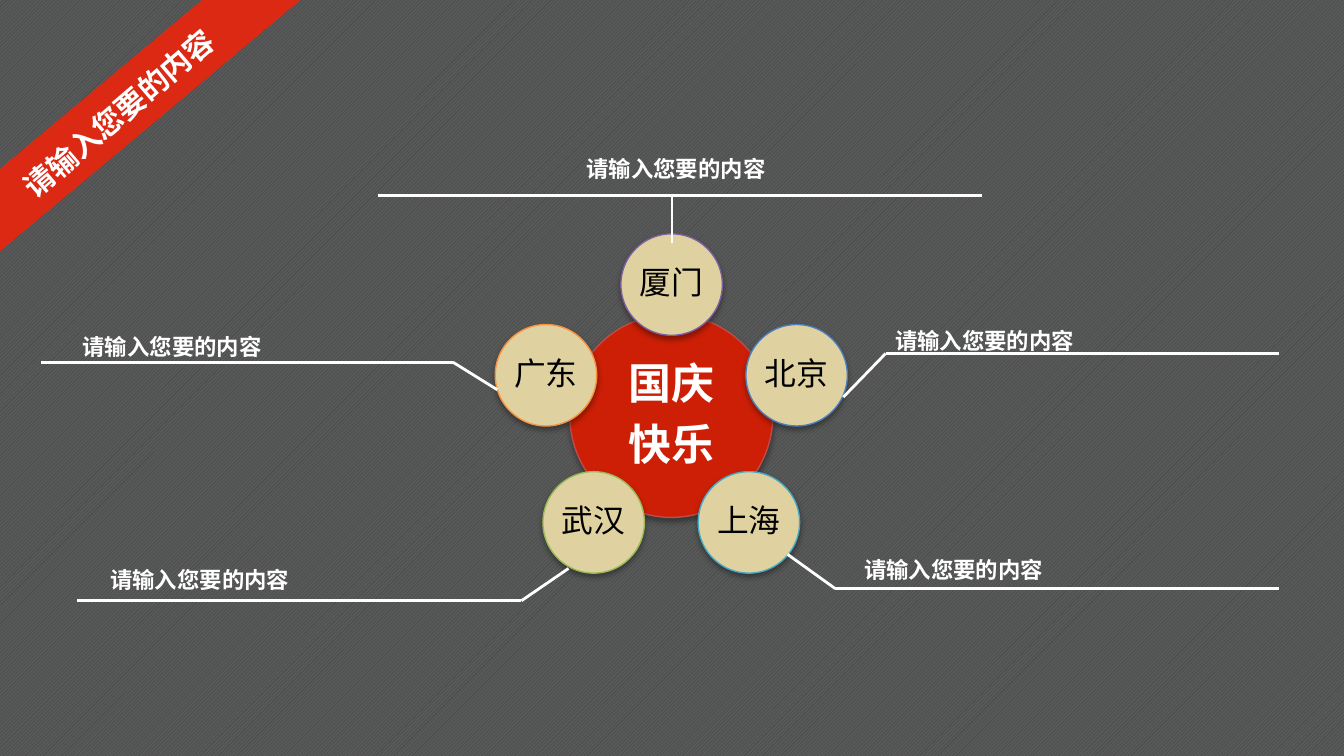
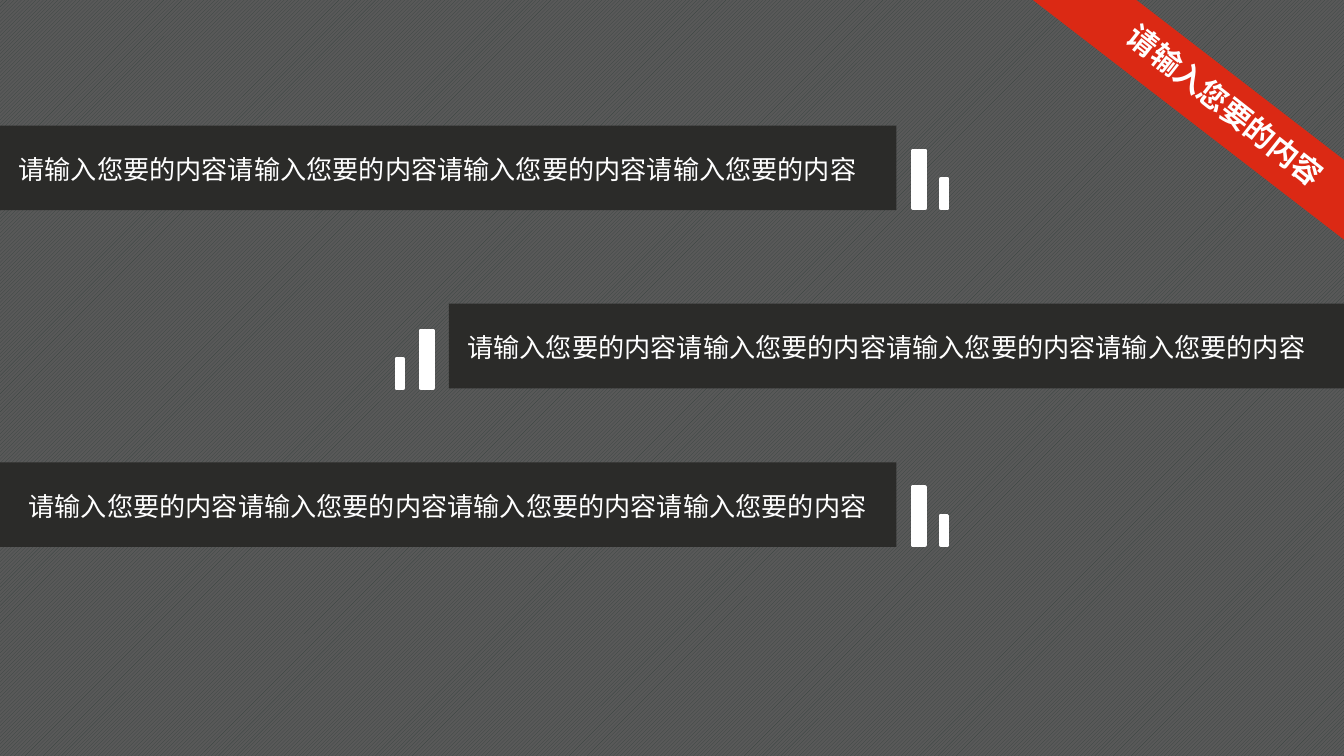
import math
import typing

import lxml.etree
import pptx
import pptx.dml.color
import pptx.enum.dml
import pptx.enum.shapes
import pptx.enum.text
import pptx.oxml.ns
import pptx.presentation
import pptx.shapes.autoshape
import pptx.shapes.base
import pptx.slide
import pptx.text.text
import pptx.util

SCALE = 4572  # EMU in one px, so 200 px to the inch
WIDTH, HEIGHT = 2000, 1125

RGB = pptx.dml.color.RGBColor
WHITE = RGB(0xFF, 0xFF, 0xFF)
BLACK = RGB(0x00, 0x00, 0x00)
RED = RGB(0xDB, 0x29, 0x14)
CRIMSON = RGB(0xCD, 0x1F, 0x06)
ROSE = RGB(0xBF, 0x4C, 0x48)
SAND = RGB(0xDF, 0xD2, 0xA0)
PURPLE = RGB(0x7D, 0x60, 0xA0)
BLUE = RGB(0x4B, 0x7E, 0xBC)
TEAL = RGB(0x46, 0xAA, 0xC5)
GREEN = RGB(0x98, 0xB9, 0x55)
ORANGE = RGB(0xF6, 0x92, 0x40)
COAL = RGB(0x2B, 0x2B, 0x29)
STRIPE = RGB(0x38, 0x43, 0x40)
GREY = RGB(0x59, 0x59, 0x59)

FACE = "Noto Sans CJK SC"
PROMPT = "请输入您要的内容"
PRESET = pptx.enum.shapes.MSO_SHAPE
qn = pptx.oxml.ns.qn


class Box(typing.NamedTuple):
    left: int
    top: int
    width: int
    height: int

    def emu(self) -> list[int]:
        return [side * SCALE for side in self]


class Style(typing.NamedTuple):
    size: int
    color: RGB = WHITE
    bold: bool = False
    lead: float | None = None


class Ribbon(typing.NamedTuple):
    band: Box
    tilt: float
    title: Box
    turn: float


class City(typing.NamedTuple):
    name: str
    edge: RGB


class Row(typing.NamedTuple):
    panel: Box
    wide: int
    thin: int
    foot: int
    text: int


TITLE = Style(16, bold=True)
LABEL = Style(12, bold=True, lead=1.3)
BODY = Style(14)
CORE = Style(23, bold=True, lead=0.9)
NODE = Style(17, BLACK, lead=0.9)

LEFT_RIBBON = Ribbon(Box(-418, 162, 1084, 94), 320.1, Box(-34, 94, 510, 74), 319.5)
RIGHT_RIBBON = Ribbon(Box(1216, 64, 1084, 94), 37.6, Box(1614, 156, 510, 74), 38.3)

HUB = (999, 619)
HUB_SIZE, NODE_SIZE, ORBIT = 302, 151, 196
CITIES = [
    City("厦门", PURPLE),
    City("北京", BLUE),
    City("上海", TEAL),
    City("武汉", GREEN),
    City("广东", ORANGE),
]
LABELS = [
    Box(1272, 808, 686, 68),
    Box(109, 476, 620, 68),
    Box(1318, 467, 628, 68),
    Box(150, 823, 620, 68),
]
TOP_LABEL = Box(853, 209, 310, 72)
LEADERS = [
    [(846, 846), (776, 894), (114, 894)],
    [(562, 291), (1461, 291)],
    [(1255, 591), (1318, 526), (1904, 526)],
    [(1172, 825), (1243, 876), (1903, 876)],
    [(740, 580), (674, 539), (61, 539)],
    [(1000, 361), (1000, 291)],
]

ROWS = [
    Row(Box(0, 187, 1334, 126), 1359, 1400, 310, 8),
    Row(Box(668, 452, 1334, 126), 626, 590, 578, 676),
    Row(Box(0, 688, 1334, 126), 1358, 1400, 811, 23),
]


def format_line(para: pptx.text.text._Paragraph, style: Style) -> None:
    font = para.font
    font.name, font.size, font.bold = FACE, pptx.util.Pt(style.size), style.bold
    font.color.rgb = style.color
    east = lxml.etree.SubElement(para._p.pPr.find(qn("a:defRPr")), qn("a:ea"))
    east.set("typeface", FACE)
    if style.lead:
        para.line_spacing = style.lead


def add_text(slide: pptx.slide.Slide, box: Box, text: str, style: Style,
             inset: tuple[int, int] = (20, 10), wrap: bool = True,
             turn: float = 0) -> None:
    shape = slide.shapes.add_textbox(*box.emu())
    shape.rotation = turn
    frame = shape.text_frame
    frame.word_wrap = wrap
    frame.auto_size = pptx.enum.text.MSO_AUTO_SIZE.SHAPE_TO_FIT_TEXT
    frame.margin_left = frame.margin_right = inset[0] * SCALE
    frame.margin_top = frame.margin_bottom = inset[1] * SCALE
    frame.text = text
    format_line(frame.paragraphs[0], style)


def add_block(slide: pptx.slide.Slide, kind: PRESET, box: Box, fill: RGB,
              edge: RGB | None = None,
              weight: float = 0) -> pptx.shapes.autoshape.Shape:
    shape = slide.shapes.add_shape(kind, *box.emu())
    shape.shadow.inherit = False
    shape.fill.solid()
    shape.fill.fore_color.rgb = fill
    if edge is None:
        shape.line.fill.background()
    else:
        shape.line.color.rgb = edge
        shape.line.width = pptx.util.Pt(weight)
    return shape


def cast_shadow(shape: pptx.shapes.base.BaseShape) -> None:
    effects = shape._element.spPr.find(qn("a:effectLst"))
    shade = lxml.etree.SubElement(
        effects, qn("a:outerShdw"), blurRad=str(int(pptx.util.Pt(3.1))),
        dist=str(int(pptx.util.Pt(1.8))), dir="5400000", rotWithShape="0")
    color = lxml.etree.SubElement(shade, qn("a:srgbClr"), val=str(BLACK))
    lxml.etree.SubElement(color, qn("a:alpha"), val="35000")


def add_disc(slide: pptx.slide.Slide, x: float, y: float, size: int,
             lines: list[str], style: Style, fill: RGB, edge: RGB) -> None:
    """Draw a shaded circle centred on x, y with one paragraph per line."""
    box = Box(round(x - size / 2), round(y - size / 2), size, size)
    disc = add_block(slide, PRESET.OVAL, box, fill, edge, 0.75)
    cast_shadow(disc)
    frame = disc.text_frame
    frame.word_wrap = False
    frame.vertical_anchor = pptx.enum.text.MSO_ANCHOR.MIDDLE
    frame.margin_left = frame.margin_right = 0
    frame.margin_top = frame.margin_bottom = 0
    frame.text = "\n".join(lines)
    for para in frame.paragraphs:
        format_line(para, style)
        para.alignment = pptx.enum.text.PP_ALIGN.CENTER
        para.space_after = 0
        after = para._p.pPr.find(qn("a:spcAft"))
        after.clear()
        lxml.etree.SubElement(after, qn("a:spcPct"), val="35000")


def add_leader(slide: pptx.slide.Slide, points: list[tuple[int, int]]) -> None:
    for start, end in zip(points, points[1:]):
        ends = [place * SCALE for place in start + end]
        line = slide.shapes.add_connector(
            pptx.enum.shapes.MSO_CONNECTOR.STRAIGHT, *ends)
        line.line.color.rgb = WHITE
        line.line.width = pptx.util.Pt(1.5)
        lxml.etree.SubElement(line._element.spPr, qn("a:effectLst"))


def add_ribbon(slide: pptx.slide.Slide, ribbon: Ribbon) -> None:
    band = add_block(slide, PRESET.RECTANGLE, ribbon.band, RED)
    band.rotation = ribbon.tilt
    add_text(slide, ribbon.title, PROMPT, TITLE, turn=ribbon.turn)


def add_slide(deck: pptx.presentation.Presentation) -> pptx.slide.Slide:
    """Add a blank slide with the striped background."""
    slide = deck.slides.add_slide(deck.slide_layouts[6])
    fill = slide.background.fill
    fill.patterned()
    fill.pattern = pptx.enum.dml.MSO_PATTERN.DARK_UPWARD_DIAGONAL
    fill.fore_color.rgb = STRIPE
    fill.back_color.rgb = GREY
    return slide


def draw_cities(slide: pptx.slide.Slide) -> None:
    add_ribbon(slide, LEFT_RIBBON)
    x, y = HUB
    add_disc(slide, x, y, HUB_SIZE, ["国庆", "快乐"], CORE, CRIMSON, ROSE)
    for step, city in enumerate(CITIES):
        angle = math.tau * step / len(CITIES)
        add_disc(slide, x + ORBIT * math.sin(angle), y - ORBIT * math.cos(angle),
                 NODE_SIZE, [city.name], NODE, SAND, city.edge)
    for box in LABELS:
        add_text(slide, box, PROMPT, LABEL, inset=(14, 8))
    for points in LEADERS:
        add_leader(slide, points)
    add_text(slide, TOP_LABEL, PROMPT, LABEL, wrap=False)


def draw_rows(slide: pptx.slide.Slide) -> None:
    for row in ROWS:
        add_block(slide, PRESET.RECTANGLE, row.panel, COAL)
        for left, width, height in [(row.wide, 18, 86), (row.thin, 10, 44)]:
            bar = Box(left, row.foot - height, width, height)
            add_block(slide, PRESET.RECTANGLE, bar, WHITE, WHITE, 2)
    add_ribbon(slide, RIGHT_RIBBON)
    for row in ROWS:
        text = Box(row.text, row.panel.top + 32, 1348, 188)
        add_text(slide, text, PROMPT * 4, BODY)


def main() -> None:
    deck = pptx.Presentation()
    deck.slide_width, deck.slide_height = WIDTH * SCALE, HEIGHT * SCALE
    draw_cities(add_slide(deck))
    draw_rows(add_slide(deck))
    deck.save("out.pptx")


if __name__ == "__main__":
    main()
